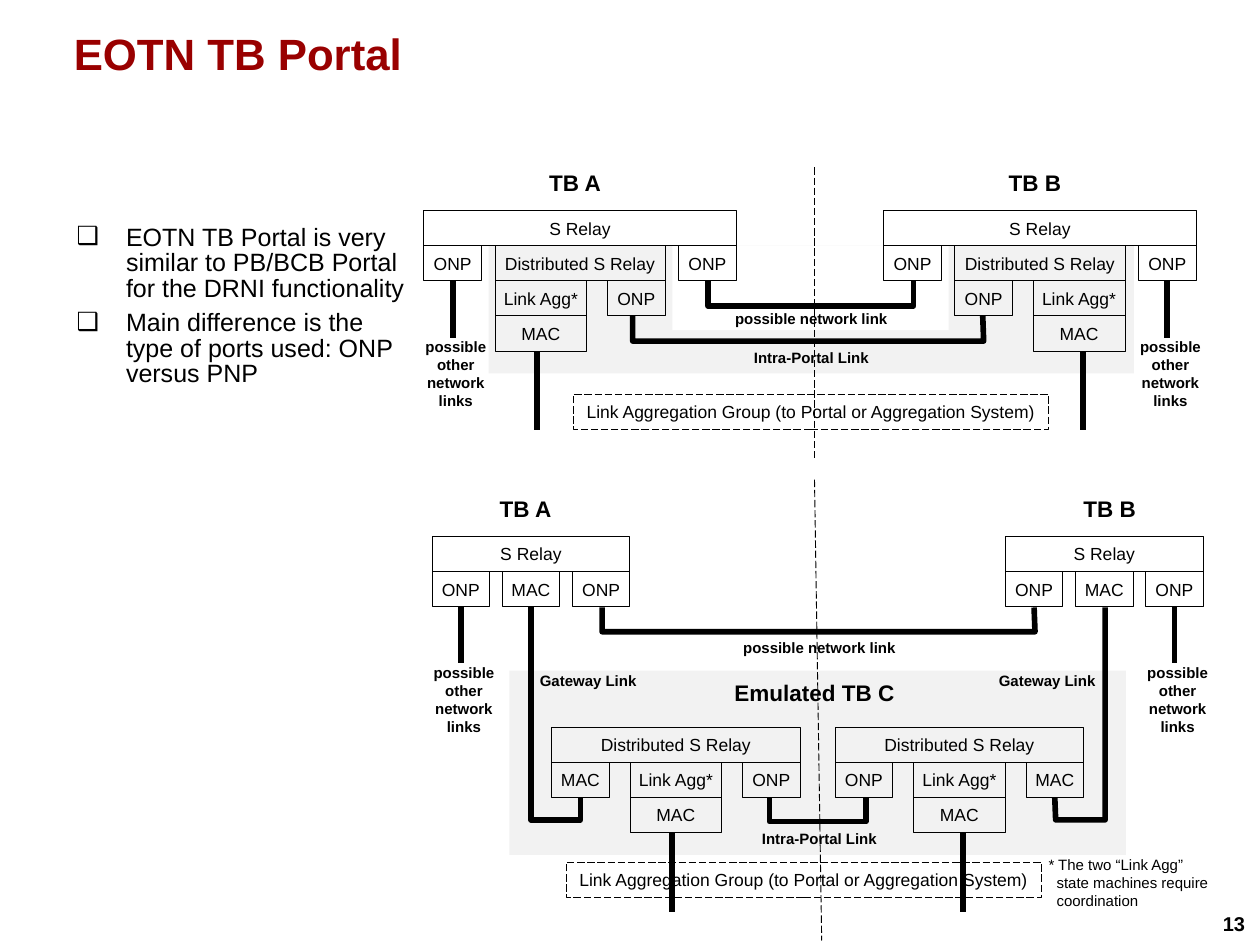
from dataclasses import dataclass, replace

from lxml import etree
from pptx import Presentation
from pptx import util as u
from pptx.dml.color import RGBColor
from pptx.enum import dml, shapes, text
from pptx.oxml import ns

PX = 9144
FONT = "Arial"
ROW = 39
PORT = 64
COLORS = {"title": "990000", "ink": "000000", "panel": "F2F2F2", "paper": "FFFFFF"}
GROUP = "Link Aggregation Group (to Portal or Aggregation System)"
OTHER_LINKS = "possible other network links"


@dataclass(frozen=True)
class Box:
    words: str
    left: int
    top: int
    width: int
    height: int = ROW
    size: int = 14
    bold: bool = False
    wrap: bool = False


@dataclass(frozen=True)
class Portal:
    mirror: int
    boxes: tuple[Box, ...]
    outlet: Box
    aggregation_x: int
    aggregation_top: int
    aggregation_bottom: int


PORTALS = (
    Portal(
        1800,
        (
            Box("S Relay", 471, 234, 347),
            Box("ONP", 754, 273, PORT),
            Box("Distributed S Relay", 550, 273, 189),
            Box("Link Agg*", 550, 312, 102),
            Box("ONP", 675, 312, PORT),
            Box("MAC", 550, 351, 102),
        ),
        Box("ONP", 471, 273, PORT),
        597, 390, 478,
    ),
    Portal(
        1817,
        (
            Box("S Relay", 480, 596, 220),
            Box("MAC", 558, 635, PORT),
            Box("ONP", 636, 635, PORT),
            Box("Distributed S Relay", 613, 808, 276),
            Box("MAC", 613, 847, PORT),
            Box("Link Agg*", 700, 847, 102),
            Box("ONP", 825, 847, PORT),
            Box("MAC", 700, 886, 102),
        ),
        Box("ONP", 480, 635, PORT),
        747, 925, 1013,
    ),
)
LABELS = (
    *(Box(words, left, top, 80, 30, 18, True) for words, left, top in (
        ("TB A", 599, 188), ("TB B", 1110, 188), ("TB A", 544, 550), ("TB B", 1193, 550))),
    Box("Emulated TB C", 805, 755, 200, 30, 18, True),
    *(Box(words, left, top, width, 20, 12, True) for words, left, top, width in (
        ("Intra-Portal Link", 827, 387, 149),
        ("Intra-Portal Link", 836, 922, 149),
        ("possible network link", 806, 344, 191),
        ("possible network link", 815, 710, 191),
        ("Gateway Link", 589, 746, 129),
        ("Gateway Link", 1099, 746, 129))),
    Box("13", 1345, 1007, 52, 39, 16, True),
)
PANELS = (
    (543, 273, 717, 142, "panel"),
    (747, 273, 307, 94, "paper"),
    (566, 745, 685, 205, "panel"),
)
LINKS = (
    ((787, 312), (787, 340), (1015, 340), (1015, 312)),
    ((703, 351), (703, 379), (1093, 379), (1092, 351)),
    ((669, 675), (669, 702), (1150, 702), (1149, 675)),
    ((590, 675), (590, 911), (645, 911), (645, 886)),
    ((1228, 675), (1228, 911), (1173, 911), (1172, 886)),
    ((855, 886), (855, 913), (962, 913), (962, 887)),
)
GROUPS = (Box(GROUP, 637, 438, 528), Box(GROUP, 629, 958, 528))
DIVIDERS = (((905, 186), (905, 509)), ((905, 533), (913, 1045)))
BULLETS = (
    "EOTN TB Portal is very similar to PB/BCB Portal for the DRNI functionality",
    "Main difference is the type of ports used: ONP versus PNP",
)


def px(*lengths: int) -> list[u.Emu]:
    return [u.Emu(length * PX) for length in lengths]


def color(name: str) -> RGBColor:
    return RGBColor.from_string(COLORS[name])


def set_font(paragraph, size: int, bold: bool = False, name: str = "ink") -> None:
    paragraph.font.name = FONT
    paragraph.font.size = u.Pt(size)
    paragraph.font.bold = bold
    paragraph.font.color.rgb = color(name)


def set_line(shape, width: float, dashed: bool = False) -> None:
    shape.line.color.rgb = color("ink")
    shape.line.width = u.Pt(width)
    if dashed:
        shape.line.dash_style = dml.MSO_LINE.LONG_DASH


def write(shape, box: Box) -> None:
    frame = shape.text_frame
    frame.margin_left = frame.margin_right = frame.margin_top = frame.margin_bottom = 0
    frame.word_wrap = box.wrap
    frame.vertical_anchor = text.MSO_ANCHOR.MIDDLE
    frame.text = box.words
    frame.paragraphs[0].alignment = text.PP_ALIGN.CENTER
    set_font(frame.paragraphs[0], box.size, box.bold)


def draw_box(slide, box: Box, dashed: bool = False):
    shape = slide.shapes.add_shape(
        shapes.MSO_SHAPE.RECTANGLE, *px(box.left, box.top, box.width, box.height))
    shape.shadow.inherit = False
    shape.fill.background()
    set_line(shape, 0.75, dashed)
    write(shape, box)
    return shape


def draw_label(slide, box: Box):
    label = slide.shapes.add_textbox(*px(box.left, box.top, box.width, box.height))
    write(label, box)
    return label


def draw_line(slide, start: tuple, end: tuple, width: float = 4.5, dashed: bool = False):
    line = slide.shapes.add_connector(shapes.MSO_CONNECTOR.STRAIGHT, *px(*start, *end))
    set_line(line, width, dashed)
    etree.SubElement(line._element.spPr, ns.qn("a:effectLst"))
    return line


def draw_link(slide, points: tuple) -> None:
    builder = slide.shapes.build_freeform(*points[0], scale=PX)
    builder.add_line_segments(points[1:], close=False)
    link = builder.convert_to_shape()
    link.shadow.inherit = False
    link.fill.background()
    set_line(link, 4.5)


def draw_panel(slide, left: int, top: int, width: int, height: int, name: str) -> None:
    panel = slide.shapes.add_shape(
        shapes.MSO_SHAPE.RECTANGLE, *px(left, top, width, height))
    panel.shadow.inherit = False
    panel.fill.solid()
    panel.fill.fore_color.rgb = color(name)
    panel.line.fill.background()


def draw_outlet(slide, box: Box) -> None:
    port = draw_box(slide, box)
    x, bottom = box.left + box.width // 2, box.top + box.height
    line = draw_line(slide, (x, bottom), (x, bottom + 63))
    line.begin_connect(port, 2)
    draw_label(slide, Box(OTHER_LINKS, x - 48, bottom + 63, 103, 81, 12, True, True))


def draw_portal(slide, portal: Portal) -> None:
    def mirrored(box: Box) -> Box:
        return replace(box, left=portal.mirror - box.left - box.width)

    for box in portal.boxes:
        draw_box(slide, box)
        draw_box(slide, mirrored(box))
    for box in (portal.outlet, mirrored(portal.outlet)):
        draw_outlet(slide, box)
    for x in (portal.aggregation_x, portal.mirror - portal.aggregation_x):
        draw_line(slide, (x, portal.aggregation_top), (x, portal.aggregation_bottom))


def fill_placeholder(shape, bounds: tuple, lines: tuple, size: int, bold: bool, name: str):
    shape.left, shape.top, shape.width, shape.height = px(*bounds)
    frame = shape.text_frame
    frame.text = "\n".join(lines)
    frame.auto_size = text.MSO_AUTO_SIZE.NONE
    frame.vertical_anchor = text.MSO_ANCHOR.TOP
    frame.margin_left, frame.margin_top, frame.margin_right, frame.margin_bottom = px(12, 6, 12, 6)
    for paragraph in frame.paragraphs:
        paragraph.alignment = text.PP_ALIGN.LEFT
        set_font(paragraph, size, bold, name)
    return frame.paragraphs


def set_indent(paragraph, margin: int, indent: int) -> None:
    properties = paragraph._p.get_or_add_pPr()
    properties.set("marL", str(margin * PX))
    properties.set("indent", str(indent * PX))


def main() -> None:
    presentation = Presentation()
    presentation.slide_width, presentation.slide_height = px(1400, 1050)
    slide = presentation.slides.add_slide(presentation.slide_layouts[1])
    fill_placeholder(slide.shapes.title, (70, 24, 1260, 132), ("EOTN TB Portal",), 35, True, "title")
    for paragraph in fill_placeholder(
            slide.placeholders[1], (70, 245, 402, 693), BULLETS, 20, False, "ink"):
        paragraph.line_spacing = 0.85
        paragraph.space_before = u.Pt(7)
        set_indent(paragraph, 58, -55)
        bullet = etree.Element(ns.qn("a:buChar"), char="❑")
        paragraph._p.pPr.find(ns.qn("a:defRPr")).addprevious(bullet)
    for panel in PANELS:
        draw_panel(slide, *panel)
    for portal in PORTALS:
        draw_portal(slide, portal)
    for points in LINKS:
        draw_link(slide, points)
    for label in LABELS:
        draw_label(slide, label)
    for group in GROUPS:
        draw_box(slide, group, dashed=True)
    for start, end in DIVIDERS:
        draw_line(slide, start, end, 0.75, dashed=True)
    note = draw_label(slide, Box(
        "* The two “Link Agg” state machines require coordination", 1165, 950, 189, 61, 12, wrap=True))
    note.text_frame.paragraphs[0].alignment = text.PP_ALIGN.LEFT
    set_indent(note.text_frame.paragraphs[0], 9, -9)
    presentation.save("out.pptx")


if __name__ == "__main__":
    main()
